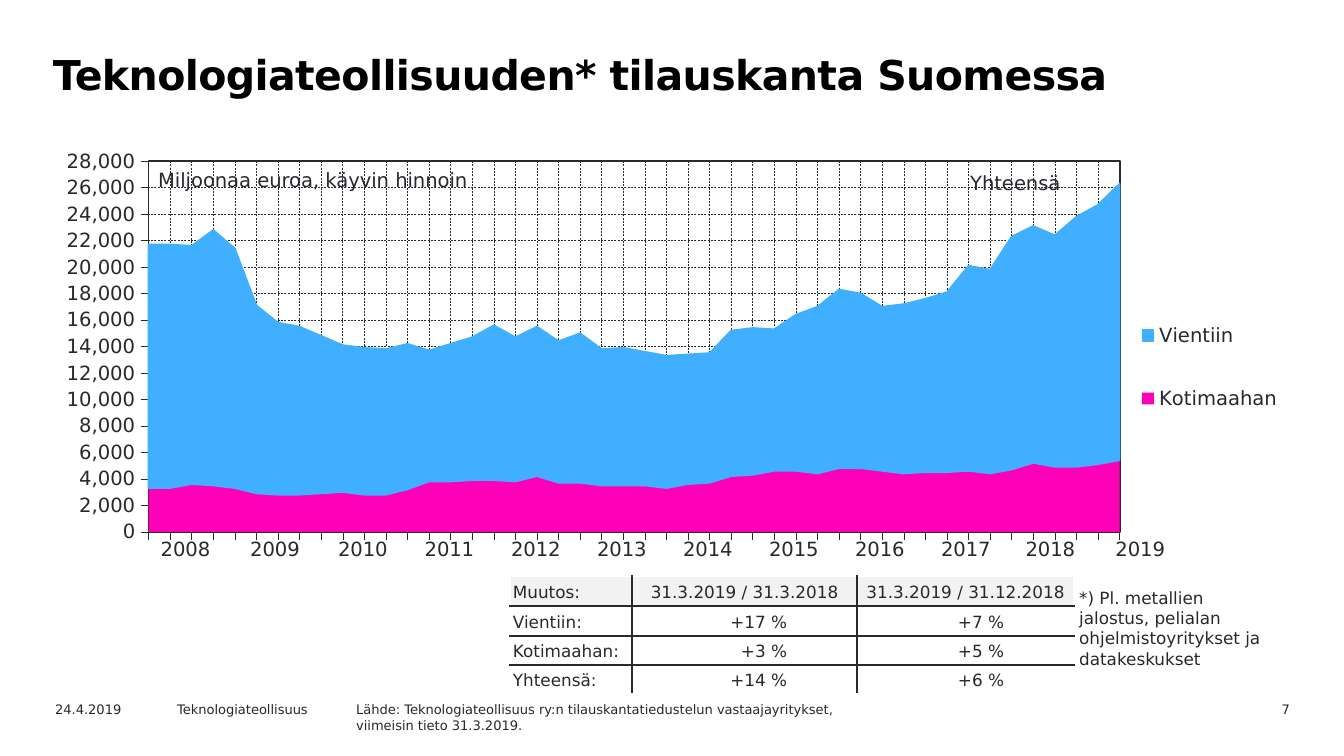
from dataclasses import dataclass

from lxml.etree import SubElement as sub
from pptx import Presentation
from pptx.chart.data import CategoryChartData as Data
from pptx.dml.color import RGBColor as RGB
from pptx.enum.chart import XL_CHART_TYPE as KIND
from pptx.enum.chart import XL_LEGEND_POSITION as SIDE
from pptx.enum.chart import XL_TICK_LABEL_POSITION as LABEL
from pptx.enum.chart import XL_TICK_MARK as TICK
from pptx.enum.dml import MSO_LINE as DASH
from pptx.enum.text import MSO_ANCHOR as ANCHOR
from pptx.enum.text import PP_ALIGN as ALIGN
from pptx.oxml import parse_xml
from pptx.oxml.ns import nsdecls, qn
from pptx.util import Pt

SCALE = 914400 / 134.4


@dataclass(frozen=True)
class Theme:
    font: str = "DejaVu Sans"
    ink: str = "29282E"
    black: str = "000000"
    white: str = "FFFFFF"
    head: str = "F2F2F2"
    pink: str = "FF00B8"
    blue: str = "40AFFF"
    title: float = 22
    label: float = 10.5
    body: float = 9
    foot: float = 7


T = Theme()
PLAIN = "{2D5ABB26-0587-4C30-8999-92F81FD0307C}"

HOME = [
    3300, 3300, 3600, 3500, 3300, 2900, 2800, 2800, 2900, 3000, 2800, 2800,
    3200, 3800, 3800, 3900, 3900, 3800, 4200, 3700, 3700, 3500, 3500, 3500,
    3300, 3600, 3700, 4200, 4300, 4600, 4600, 4400, 4800, 4800, 4600, 4400,
    4500, 4500, 4600, 4400, 4700, 5200, 4900, 4900, 5100, 5400,
]
EXPORT = [
    18400, 18400, 18000, 19300, 18100, 14200, 13000, 12700, 11900, 11100, 11100, 11000,
    11000, 9900, 10400, 10800, 11700, 10900, 11300, 10700, 11300, 10300, 10400, 10100,
    10000, 9800, 9800, 11000, 11100, 10700, 11800, 12600, 13500, 13200, 12400, 12800,
    13100, 13600, 15500, 15400, 17600, 17900, 17500, 18900, 19600, 20900,
]
CHANGE = [
    ["Muutos:", "31.3.2019 / 31.3.2018", "31.3.2019 / 31.12.2018"],
    ["Vientiin:", "+17 %", "+7 %"],
    ["Kotimaahan:", "+3 %", "+5 %"],
    ["Yhteensä:", "+14 %", "+6 %"],
]
YEARS = [[str(year) for year in range(2008, 2020)]]


def px(*nums):
    return [round(num * SCALE) for num in nums]


def style(font, size, color=T.ink, bold=False):
    font.name = T.font
    font.size = Pt(size)
    font.bold = bold
    font.color.rgb = RGB.from_string(color)


def write(para, text, size, align=ALIGN.LEFT, color=T.ink, bold=False):
    para.alignment = align
    run = para.add_run()
    run.text = text
    style(run.font, size, color, bold)
    return run


def add_text(slide, area, lines, size, align=ALIGN.LEFT, wrap=True):
    frame = slide.shapes.add_textbox(*px(*area)).text_frame
    frame.word_wrap = wrap
    for num, line in enumerate(lines):
        para = frame.add_paragraph() if num else frame.paragraphs[0]
        write(para, line, size, align)


def add_title(slide, text):
    frame = slide.shapes.add_textbox(*px(38, 42, 1175, 95)).text_frame
    frame.word_wrap = True
    frame.margin_left = px(15)[0]
    para = frame.paragraphs[0]
    para.line_spacing = Pt(27)
    run = write(para, text, T.title, color=T.black, bold=True)
    run.font._element.set("spc", "-30")


def add_grid(slide, x, y, cols, rows, texts):
    area = px(x, y, sum(cols), sum(rows))
    table = slide.shapes.add_table(len(rows), len(cols), *area).table
    table.first_row = table.horz_banding = False
    table._tbl.tblPr.find(qn("a:tableStyleId")).text = PLAIN
    for col, wide in zip(table.columns, px(*cols)):
        col.width = wide
    for row, tall in zip(table.rows, px(*rows)):
        row.height = tall
    for r, line in enumerate(texts):
        for c, text in enumerate(line):
            yield r, c, table.cell(r, c), text


def add_years(slide):
    cols = [89, 90, 86, 87] + [86] * 6 + [83, 97]
    for _, _, cell, text in add_grid(slide, 141, 532, cols, [34], YEARS):
        cell.fill.background()
        write(cell.text_frame.paragraphs[0], text, T.label, ALIGN.CENTER)


def set_edge(cell, side, color):
    props = cell._tc.get_or_add_tcPr()
    line = parse_xml(
        f'<a:ln{side} {nsdecls("a")} w="12700"><a:solidFill>'
        f'<a:srgbClr val="{color}"/></a:solidFill></a:ln{side}>'
    )
    props.insert("LRTB".index(side), line)


def add_change(slide):
    cols, rows = [122, 225, 217], [30, 30, 29, 29]
    for r, c, cell, text in add_grid(slide, 510, 576, cols, rows, CHANGE):
        value = r > 0 and c > 0
        gap = px(3)[0]
        cell.margin_left = cell.margin_top = cell.margin_bottom = gap
        cell.margin_right = px(70)[0] if value else gap
        cell.vertical_anchor = ANCHOR.BOTTOM
        cell.fill.solid()
        cell.fill.fore_color.rgb = RGB.from_string(T.white if r else T.head)
        align = ALIGN.RIGHT if value else ALIGN.CENTER if c else ALIGN.LEFT
        write(cell.text_frame.paragraphs[0], text, T.body, align)
        outer = {"L": c == 0, "R": c == 2, "T": r == 0, "B": r == 3}
        for side in "LRTB":
            set_edge(cell, side, T.white if outer[side] else T.ink)


def set_place(node, index, x, y, w, h, inner=False):
    for old in node.findall(qn("c:layout")):
        node.remove(old)
    layout = parse_xml(f'<c:layout {nsdecls("c")}/>')
    node.insert(index, layout)
    manual = sub(layout, qn("c:manualLayout"))
    if inner:
        sub(manual, qn("c:layoutTarget")).set("val", "inner")
    for name in ("xMode", "yMode"):
        sub(manual, qn(f"c:{name}")).set("val", "edge")
    for name, num in zip("xywh", (x, y, w, h)):
        sub(manual, qn(f"c:{name}")).set("val", str(num))


def set_line(line, width, dash=None):
    line.color.rgb = RGB.from_string(T.ink)
    line.width = Pt(width)
    if dash:
        line.dash_style = dash


def set_axis(axis):
    axis.major_tick_mark = TICK.OUTSIDE
    axis.minor_tick_mark = TICK.NONE
    axis.has_major_gridlines = True
    set_line(axis.format.line, 0.22)
    set_line(axis.major_gridlines.format.line, 0.25, DASH.DASH)


def add_orders(slide):
    data = Data(number_format="#,##0")
    data.categories = [str(num + 1) for num in range(len(HOME))]
    data.add_series("Kotimaahan", HOME)
    data.add_series("Vientiin", EXPORT)
    area = px(56, 149, 1234, 419)
    chart = slide.shapes.add_chart(KIND.AREA_STACKED, *area, data).chart
    chart.has_title = False
    style(chart.font, T.label)
    plot = chart.plots[0]
    plot.vary_by_categories = False
    for series, color in zip(plot.series, (T.pink, T.blue)):
        series.format.fill.solid()
        series.format.fill.fore_color.rgb = RGB.from_string(color)
    line = plot.series[1].format.line
    line.color.rgb = RGB.from_string(T.blue)
    line.width = Pt(0.88)
    cat, val = chart.category_axis, chart.value_axis
    set_axis(cat)
    set_axis(val)
    cat.tick_label_position = LABEL.NONE
    val.minimum_scale, val.maximum_scale, val.major_unit = 0, 28000, 2000
    val.tick_labels.number_format = "#,##0"
    val.tick_labels.number_format_is_linked = False
    style(val.tick_labels.font, T.label)
    val._element.find(qn("c:crossBetween")).set("val", "midCat")
    frame = chart._chartSpace.chart.plotArea
    set_place(frame, 0, 0.075, 0.029, 0.787, 0.885, True)
    frame.append(parse_xml(
        f'<c:spPr {nsdecls("c", "a")}><a:noFill/><a:ln w="12700"><a:solidFill>'
        f'<a:srgbClr val="{T.ink}"/></a:solidFill></a:ln></c:spPr>'
    ))
    chart.has_legend = True
    key = chart.legend
    key.position = SIDE.RIGHT
    key.include_in_layout = False
    style(key.font, T.label)
    set_place(key._element, 1, 0.87, 0.32, 0.13, 0.4)


def main():
    deck = Presentation()
    deck.slide_width, deck.slide_height = px(1344, 756)
    slide = deck.slides.add_slide(deck.slide_layouts[6])
    add_title(slide, "Teknologiateollisuuden* tilauskanta Suomessa")
    add_text(slide, (1177, 695, 126, 24), ["7"], T.foot, ALIGN.RIGHT)
    add_text(slide, (42, 695, 134, 24), ["24.4.2019"], T.foot)
    add_text(slide, (164, 695, 191, 24), ["Teknologiateollisuus"], T.foot)
    add_text(slide, (343, 695, 672, 35), [
        "Lähde: Teknologiateollisuus ry:n tilauskantatiedustelun vastaajayritykset,",
        "viimeisin tieto 31.3.2019.",
    ], T.foot)
    add_orders(slide)
    add_years(slide)
    add_text(slide, (145, 161, 349, 36), ["Miljoonaa euroa, käyvin hinnoin"], T.label, wrap=False)
    add_change(slide)
    note = "*) Pl. metallien jalostus, pelialan ohjelmistoyritykset ja datakeskukset"
    add_text(slide, (1066, 581, 223, 95), [note], T.body)
    add_text(slide, (957, 164, 142, 36), ["Yhteensä"], T.label)
    deck.save("out.pptx")


if __name__ == "__main__":
    main()
